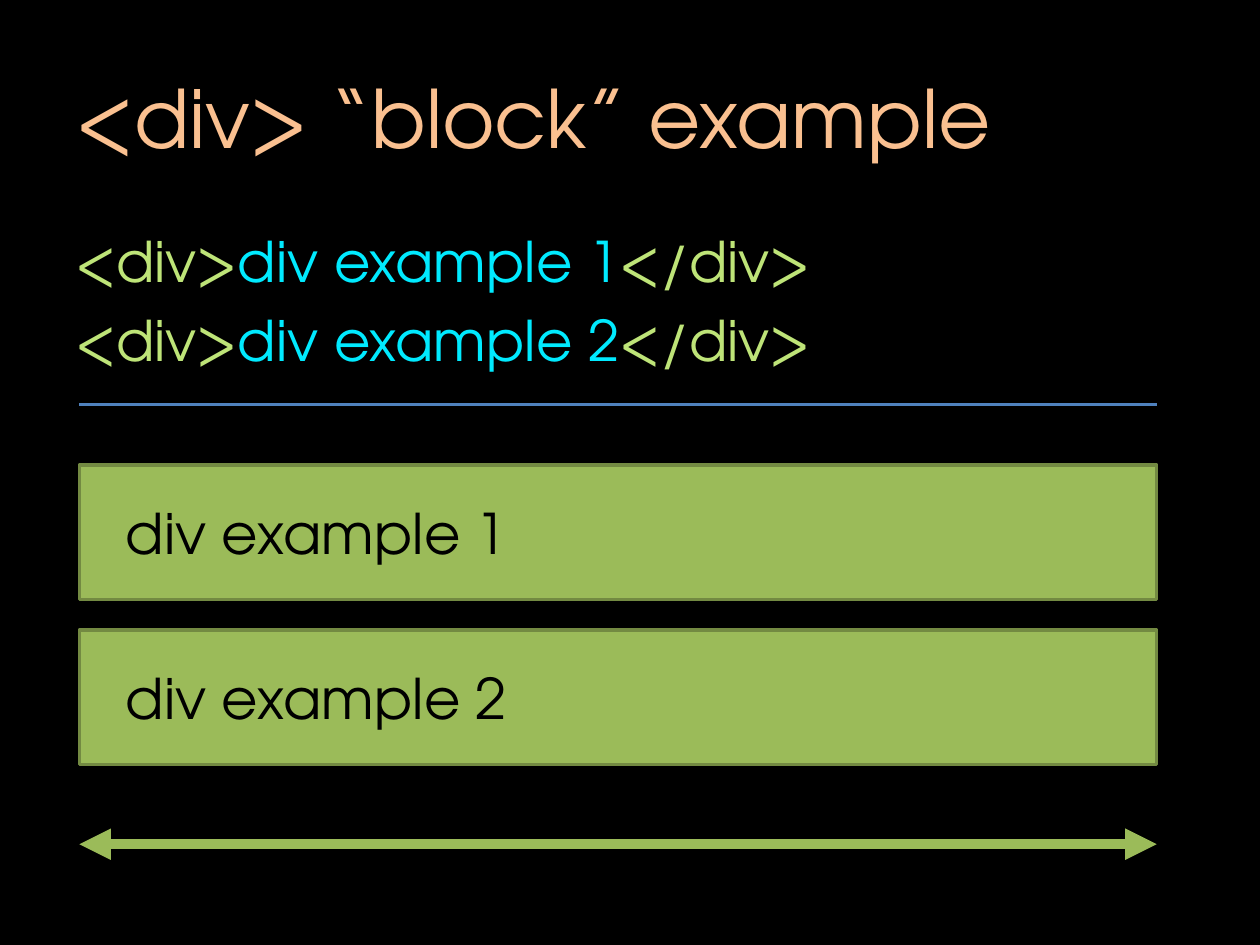
from lxml.etree import SubElement
from pptx import Presentation
from pptx.dml.color import RGBColor
from pptx.enum.shapes import MSO_CONNECTOR, MSO_SHAPE
from pptx.enum.text import MSO_ANCHOR, MSO_AUTO_SIZE
from pptx.oxml.ns import qn
from pptx.util import Inches, Pt

FONT = "TeX Gyre Adventor"
BLACK = RGBColor(0x00, 0x00, 0x00)
PEACH = RGBColor(0xFA, 0xC0, 0x90)
LIME = RGBColor(0xBE, 0xE4, 0x78)
CYAN = RGBColor(0x00, 0xEA, 0xFF)
BLUE = RGBColor(0x4F, 0x81, 0xBD)
GREEN = RGBColor(0x9B, 0xBB, 0x59)
DARK_GREEN = RGBColor(0x73, 0x8A, 0x42)

EXAMPLES = ["div example 1", "div example 2"]
LEFT, WIDTH = 0.63, 8.55


def add_run(paragraph, text, size, color):
    run = paragraph.add_run()
    run.text = text
    for name, value in {"name": FONT, "size": Pt(size)}.items():
        setattr(run.font, name, value)
    run.font.color.rgb = color


def add_text_box(slide, left, top, width, height, **frame_format):
    box = slide.shapes.add_textbox(*map(Inches, (left, top, width, height)))
    for name, value in frame_format.items():
        setattr(box.text_frame, name, value)
    return box.text_frame


def add_line(slide, left, top, width, color, weight, arrows=False):
    line = slide.shapes.add_connector(
        MSO_CONNECTOR.STRAIGHT,
        Inches(left), Inches(top), Inches(left + width), Inches(top))
    line.line.color.rgb = color
    line.line.width = Pt(weight)
    properties = line.line._get_or_add_ln()
    if arrows:
        for end in ("a:headEnd", "a:tailEnd"):
            SubElement(properties, qn(end), type="triangle")
    # An empty effect list switches the theme shadow off
    SubElement(line._element.spPr, qn("a:effectLst"))


def add_title(slide, left, top, width, height):
    frame = add_text_box(slide, left, top, width, height,
                         word_wrap=True, vertical_anchor=MSO_ANCHOR.MIDDLE)
    add_run(frame.paragraphs[0], "<div> “block” example", 46, PEACH)


def add_code(slide, left, top, width, height):
    frame = add_text_box(slide, left, top, width, height, word_wrap=True)
    for index, example in enumerate(EXAMPLES):
        paragraph = frame.add_paragraph() if index else frame.paragraphs[0]
        if index:
            paragraph.space_before = Pt(6.4)
        for text, color in (("<div>", LIME), (example, CYAN), ("</div>", LIME)):
            add_run(paragraph, text, 32, color)


def add_block(slide, left, top, width, height, label):
    block = slide.shapes.add_shape(
        MSO_SHAPE.RECTANGLE, *map(Inches, (left, top, width, height)))
    block.shadow.inherit = False
    block.fill.solid()
    block.fill.fore_color.rgb = GREEN
    block.line.color.rgb = DARK_GREEN
    block.line.width = Pt(2)
    frame = add_text_box(slide, left + 0.27, top + 0.22, 3.27, 0.64,
                         word_wrap=False,
                         auto_size=MSO_AUTO_SIZE.SHAPE_TO_FIT_TEXT)
    add_run(frame.paragraphs[0], label, 32, BLACK)


def add_rendered_blocks(slide, left, top, width, height, pitch):
    for index, example in enumerate(EXAMPLES):
        add_block(slide, left, top + index * pitch, width, height, example)


def main():
    presentation = Presentation()
    presentation.slide_width = Inches(10)
    presentation.slide_height = Inches(7.5)
    slide = presentation.slides.add_slide(presentation.slide_layouts[6])
    slide.background.fill.solid()
    slide.background.fill.fore_color.rgb = BLACK

    # Heading and markup
    add_title(slide, 0.5, 0.3, 9, 1.25)
    add_code(slide, 0.5, 1.75, 9, 4.95)

    # Divider, rendered blocks and full-width arrow
    add_line(slide, LEFT, 3.21, WIDTH, BLUE, 2)
    add_rendered_blocks(slide, LEFT, 3.69, WIDTH, 1.07, pitch=1.31)
    add_line(slide, LEFT, 6.7, WIDTH, GREEN, 6, arrows=True)

    presentation.save("out.pptx")


if __name__ == "__main__":
    main()
